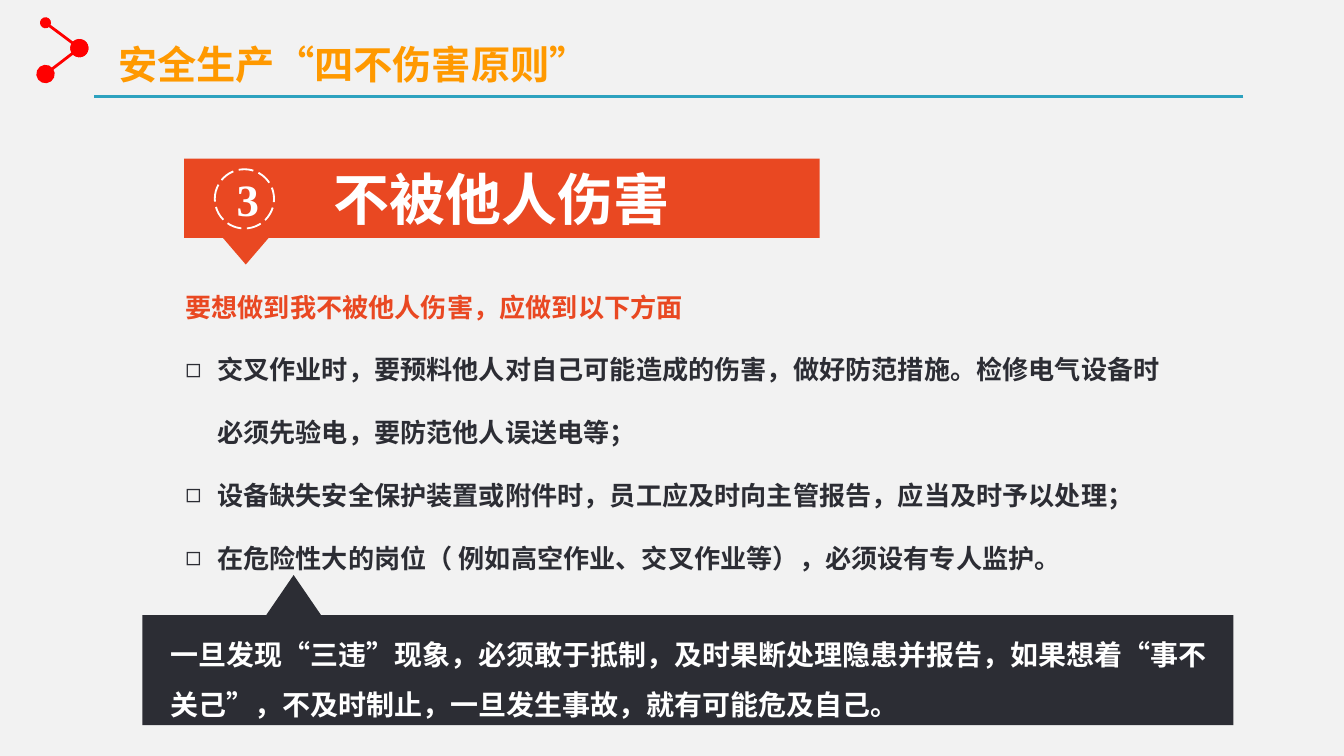
import pptx
import pptx.util
import pptx.dml.color
import pptx.enum.dml
import pptx.enum.shapes
import pptx.enum.text
import pptx.oxml.ns
from lxml import etree

Cm = pptx.util.Cm
Pt = pptx.util.Pt
RGBColor = pptx.dml.color.RGBColor
SHAPE = pptx.enum.shapes.MSO_SHAPE
ALIGN = pptx.enum.text.PP_ALIGN
ANCHOR = pptx.enum.text.MSO_ANCHOR
qn = pptx.oxml.ns.qn

BACKGROUND = RGBColor(0xF2, 0xF2, 0xF2)
ORANGE = RGBColor(0xFF, 0x99, 0x00)
VERMILION = RGBColor(0xE9, 0x48, 0x22)
DARK = RGBColor(0x2C, 0x2D, 0x34)
WHITE = RGBColor(0xFF, 0xFF, 0xFF)
TEAL = RGBColor(0x2D, 0xA2, 0xBF)
RED = RGBColor(0xFF, 0x00, 0x00)
FONT = "Times New Roman"

TITLE = "安全生产“四不伤害原则”"
LEAD = "要想做到我不被他人伤害，应做到以下方面"
MEASURES = [
    "交叉作业时，要预料他人对自己可能造成的伤害，做好防范措施。检修电气设备时必须先验电，要防范他人误送电等；",
    "设备缺失安全保护装置或附件时，员工应及时向主管报告，应当及时予以处理；",
    "在危险性大的岗位（ 例如高空作业、交叉作业等），必须设有专人监护。",
]
WARNING = (
    "一旦发现“三违”现象，必须敢于抵制，及时果断处理隐患并报告，"
    "如果想着“事不关己”，不及时制止，一旦发生事故，就有可能危及自己。"
)


def place(shape, left, top, width, height):
    shape.left, shape.top = Cm(left), Cm(top)
    shape.width, shape.height = Cm(width), Cm(height)


def format_paragraph(paragraph, size, color, spacing=1.0, align=ALIGN.LEFT):
    paragraph.alignment = align
    paragraph.line_spacing = spacing
    paragraph.space_before = paragraph.space_after = Pt(0)
    for run in paragraph.runs:
        run.font.name = FONT
        run.font.size = Pt(size)
        run.font.bold = True
        run.font.color.rgb = color


def prepare_frame(frame):
    frame.word_wrap = True
    frame.auto_size = pptx.enum.text.MSO_AUTO_SIZE.NONE
    frame.vertical_anchor = ANCHOR.TOP


def set_bullet(paragraph, char=None):
    """Give the paragraph a hanging bullet, or take the inherited one away."""
    properties = paragraph._p.get_or_add_pPr()
    indent = Cm(0.6) if char else 0
    properties.set("marL", str(indent))
    properties.set("indent", str(-indent))
    if char:
        etree.SubElement(properties, qn("a:buChar")).set("char", char)
    else:
        etree.SubElement(properties, qn("a:buNone"))


def add_line(shapes, start, end, color, head=None, tail=None):
    """Draw a line; head and tail are the sizes of round ends."""
    line = shapes.add_connector(
        pptx.enum.shapes.MSO_CONNECTOR.STRAIGHT, *map(Cm, start + end))
    line.line.color.rgb = color
    line.line.width = Pt(1.5)
    outline = line.line._get_or_add_ln()
    for tag, size in (("a:headEnd", head), ("a:tailEnd", tail)):
        if size:
            etree.SubElement(outline, qn(tag), type="oval", w=size, len=size)
    etree.SubElement(line._element.spPr, qn("a:effectLst"))


def add_block(slide, kind, box, fill=None):
    block = slide.shapes.add_shape(kind, *map(Cm, box))
    block.shadow.inherit = False
    block.line.fill.background()
    if fill is None:
        block.fill.background()
    else:
        block.fill.solid()
        block.fill.fore_color.rgb = fill
    return block


def label_block(block, text, size):
    frame = block.text_frame
    frame.text = text
    frame.vertical_anchor = ANCHOR.MIDDLE
    format_paragraph(frame.paragraphs[0], size, WHITE, align=ALIGN.CENTER)


def add_header(slide):
    add_line(slide.shapes, (23.5, 1.83), (1.78, 1.83), TEAL)
    ornament = slide.shapes.add_group_shape().shapes
    top, middle, bottom = (0.86, 0.43), (1.5, 0.91), (0.86, 1.4)
    add_line(ornament, top, middle, RED, "med", "lg")
    add_line(ornament, middle, bottom, RED, "lg", "lg")

    title = slide.shapes.title
    place(title, 1.98, 0.2, 12.27, 1.6)
    title.text_frame.text = TITLE
    prepare_frame(title.text_frame)
    format_paragraph(title.text_frame.paragraphs[0], 21, ORANGE, 1.5)


def add_banner(slide):
    banner = add_block(slide, SHAPE.RECTANGLE, (3.48, 3, 12.01, 1.5), VERMILION)
    label_block(banner, "不被他人伤害", 30)
    number = add_block(slide, SHAPE.OVAL, (4.06, 3.2, 1.12, 1.12))
    number.line.color.rgb = WHITE
    number.line.width = Pt(1)
    number.line.dash_style = pptx.enum.dml.MSO_LINE.LONG_DASH
    label_block(number, "3", 24)
    pointer = add_block(
        slide, SHAPE.ISOSCELES_TRIANGLE, (4.19, 4.47, 0.91, 0.53), VERMILION)
    pointer.rotation = 180


def add_measures(slide):
    body = slide.placeholders[1]
    place(body, 3.25, 4.78, 19.05, 6.25)
    frame = body.text_frame
    prepare_frame(frame)
    lead = frame.paragraphs[0]
    lead.text = LEAD
    set_bullet(lead)
    format_paragraph(lead, 14, VERMILION, 2.0)
    for measure in MEASURES:
        paragraph = frame.add_paragraph()
        paragraph.text = measure
        set_bullet(paragraph, "◻")
        format_paragraph(paragraph, 14, DARK, 2.0)


def add_warning(slide):
    add_block(slide, SHAPE.RECTANGLE, (2.69, 11.63, 20.62, 2.08), DARK)
    add_block(slide, SHAPE.ISOSCELES_TRIANGLE, (5.03, 10.87, 1.04, 0.76), DARK)
    warning = slide.shapes.add_textbox(*map(Cm, (2.97, 11.61, 20.37, 2.18)))
    warning.text_frame.text = WARNING
    prepare_frame(warning.text_frame)
    format_paragraph(warning.text_frame.paragraphs[0], 15, WHITE, 1.5)


def main():
    presentation = pptx.Presentation()
    presentation.slide_width = Cm(25.4)
    presentation.slide_height = Cm(14.29)
    slide = presentation.slides.add_slide(presentation.slide_layouts[1])
    slide.background.fill.solid()
    slide.background.fill.fore_color.rgb = BACKGROUND
    add_header(slide)
    add_banner(slide)
    add_measures(slide)
    add_warning(slide)
    presentation.save("out.pptx")


if __name__ == "__main__":
    main()
